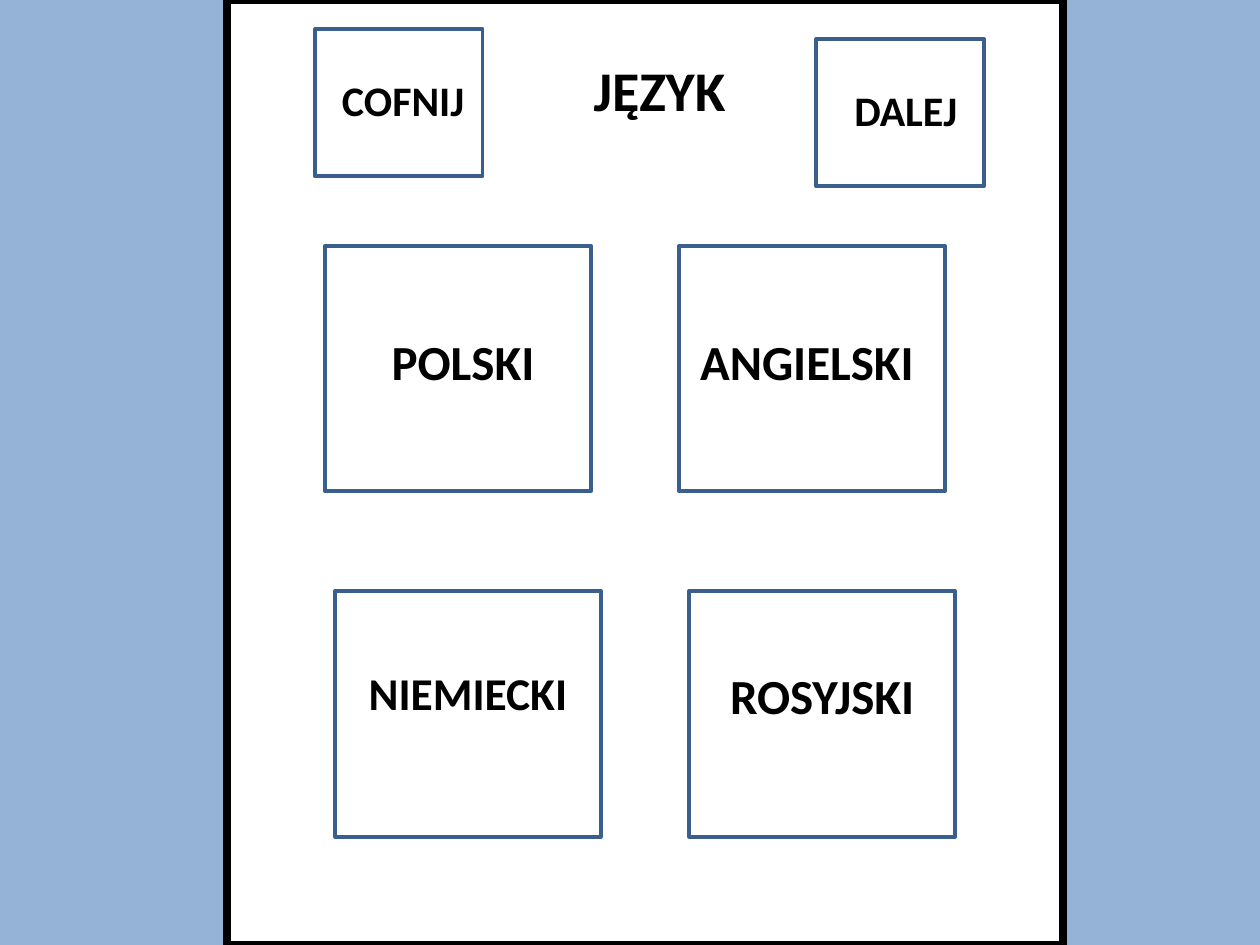
from dataclasses import dataclass

from pptx import Presentation
from pptx.dml.color import RGBColor
from pptx.enum.shapes import MSO_SHAPE
from pptx.enum.text import MSO_ANCHOR, MSO_AUTO_SIZE, PP_ALIGN
from pptx.util import Inches, Pt

RECTANGLE = MSO_SHAPE.RECTANGLE
CENTER = PP_ALIGN.CENTER
TOP = MSO_ANCHOR.TOP
NO_AUTOFIT = MSO_AUTO_SIZE.NONE
TITLE_ONLY_LAYOUT = 5


@dataclass(frozen=True)
class Theme:
    font: str = "Calibri"
    background: RGBColor = RGBColor(0x95, 0xB3, 0xD7)
    panel: RGBColor = RGBColor(0xFF, 0xFF, 0xFF)
    ink: RGBColor = RGBColor(0, 0, 0)
    border: RGBColor = RGBColor(0x3A, 0x5F, 0x8C)
    panel_line: float = 4.5
    border_line: float = 2.25
    title_size: int = 32
    button_size: int = 24
    card_size: int = 28
    small_card_size: int = 26


THEME = Theme()


def place(shape, box):
    """Move a shape to a (left, top, width, height) box in inches."""
    for name, value in zip(("left", "top", "width", "height"), box):
        setattr(shape, name, Inches(value))


def format_text(shape, text, size):
    frame = shape.text_frame
    frame_format = {"text": text, "word_wrap": True, "auto_size": NO_AUTOFIT,
                    "vertical_anchor": TOP}
    for name, value in frame_format.items():
        setattr(frame, name, value)
    paragraph = frame.paragraphs[0]
    paragraph.alignment = CENTER
    font = paragraph.runs[0].font
    for name, value in {"name": THEME.font, "size": Pt(size), "bold": True}.items():
        setattr(font, name, value)
    font.color.rgb = THEME.ink


def add_rectangle(slide, box, line_color, line_width, fill=None):
    shape = slide.shapes.add_shape(RECTANGLE, *map(Inches, box))
    shape.shadow.inherit = False
    if fill is None:
        shape.fill.background()
    else:
        shape.fill.solid()
        shape.fill.fore_color.rgb = fill
    shape.line.color.rgb = line_color
    shape.line.width = Pt(line_width)


def add_tile(slide, box, label, label_box, size):
    """Outlined tile; label_box is relative to the tile's top left corner."""
    left, top = box[:2]
    add_rectangle(slide, box, THEME.border, THEME.border_line)
    dx, dy, width, height = label_box
    text_box = slide.shapes.add_textbox(
        Inches(left + dx), Inches(top + dy), Inches(width), Inches(height))
    format_text(text_box, label, size)


def add_header(slide, box):
    """Title between the back and forward buttons."""
    left, top = box[:2]
    buttons = (("COFNIJ", 0, 0, -0.08), ("DALEJ", 3.98, 0.08, -0.07))
    for label, dx, dy, label_dx in buttons:
        add_tile(slide, (left + dx, top + dy, 1.33, 1.17), label,
                 (label_dx, 0.31, 1.56, 0.5), THEME.button_size)
    title = slide.shapes.title
    place(title, (left + 1.72, top + 0.16, 2.03, 0.64))
    format_text(title, "JĘZYK", THEME.title_size)
    # Bring the title in front of the panel
    slide.shapes.element.append(title.element)


def add_language_grid(slide, box):
    """Two rows of language cards, the lower row slightly indented."""
    left, top = box[:2]
    column_step, row_step, row_indent = 2.81, 2.74, 0.08
    rows = (
        (("POLSKI", (0.08, 0.63, 2.03, 0.57), THEME.card_size),
         ("ANGIELSKI", (0, 0.63, 2.03, 0.57), THEME.card_size)),
        (("NIEMIECKI", (0, 0.54, 2.11, 0.54), THEME.small_card_size),
         ("ROSYJSKI", (0.08, 0.54, 1.95, 0.57), THEME.card_size)),
    )
    for row, cards in enumerate(rows):
        for column, (label, label_box, size) in enumerate(cards):
            card_left = left + column * column_step + row * row_indent
            card_box = (card_left, top + row * row_step, 2.11, 1.95)
            add_tile(slide, card_box, label, label_box, size)


def main():
    presentation = Presentation()
    presentation.slide_width = Inches(10)
    presentation.slide_height = Inches(7.5)
    slide = presentation.slides.add_slide(
        presentation.slide_layouts[TITLE_ONLY_LAYOUT])
    slide.background.fill.solid()
    slide.background.fill.fore_color.rgb = THEME.background

    # White page panel
    add_rectangle(slide, (1.8, 0, 6.64, 7.5), THEME.ink, THEME.panel_line, THEME.panel)
    add_header(slide, (2.5, 0.23, 5.31, 1.25))
    add_language_grid(slide, (2.58, 1.95, 5, 4.69))
    presentation.save("out.pptx")


if __name__ == "__main__":
    main()
